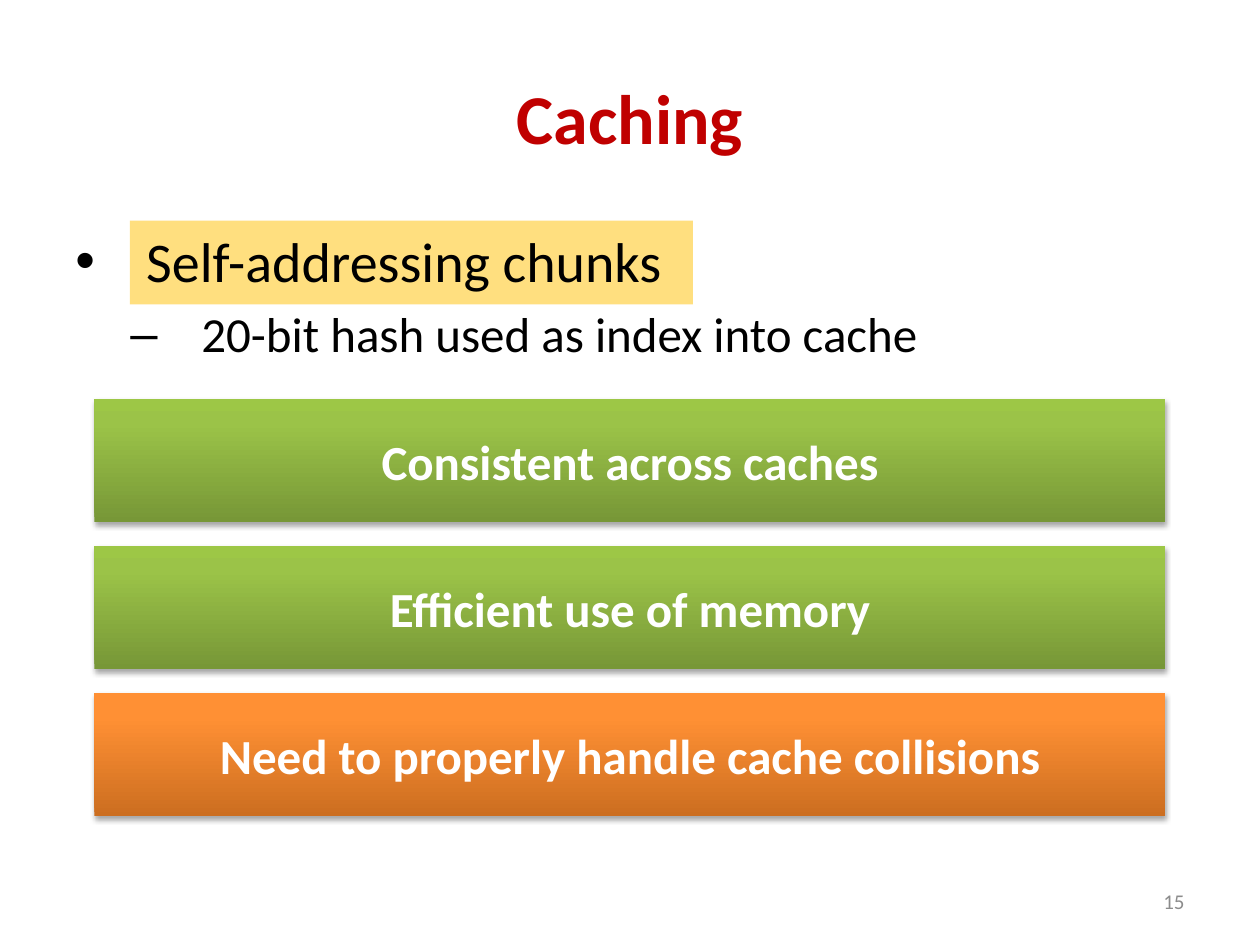
from dataclasses import dataclass

from lxml import etree
from pptx import Presentation
from pptx import util as u
from pptx.dml.color import RGBColor
from pptx.enum import shapes, text
from pptx.oxml import ns


@dataclass(frozen=True)
class Theme:
    font: str = "Calibri"
    bullet_font: str = "Arial"
    title_size: int = 40
    body_size: int = 32
    detail_size: int = 28
    number_size: int = 12
    title: str = "C00000"
    body: str = "000000"
    number: str = "8C8C8C"
    on_band: str = "FFFFFF"
    highlight: str = "FFC000"
    green: tuple = ((0, "779737"), (80, "9BC348"), (100, "9DC746"))
    orange: tuple = ((0, "CC6E20"), (80, "FF9034"), (100, "FF9136"))


def add_xml(parent, tag, **attributes):
    return etree.SubElement(parent, ns.qn(tag), attributes)


class SlideBuilder:
    def __init__(self, slide, theme):
        self.slide = slide
        self.theme = theme

    def add_run(self, paragraph, words, size, color, bold=False):
        run = paragraph.add_run()
        run.text = words
        run.font.name = self.theme.font
        run.font.size = u.Pt(size)
        run.font.bold = bold
        run.font.color.rgb = RGBColor.from_string(color)

    def add_title(self, words, left, top, width, height):
        title = self.slide.shapes.title
        title.left, title.top = u.Pt(left), u.Pt(top)
        title.width, title.height = u.Pt(width), u.Pt(height)
        title.text_frame.vertical_anchor = text.MSO_ANCHOR.MIDDLE
        paragraph = title.text_frame.paragraphs[0]
        paragraph.alignment = text.PP_ALIGN.CENTER
        self.add_run(paragraph, words, self.theme.title_size, self.theme.title, True)

    def add_rectangle(self, left, top, width, height):
        shape = self.slide.shapes.add_shape(
            shapes.MSO_SHAPE.RECTANGLE, u.Pt(left), u.Pt(top), u.Pt(width), u.Pt(height))
        shape.line.fill.background()
        shape.shadow.inherit = False
        return shape

    def add_highlight(self, left, top, width, height):
        shape = self.add_rectangle(left, top, width, height)
        shape.fill.solid()
        shape.fill.fore_color.rgb = RGBColor.from_string(self.theme.highlight)
        color = shape.fill._xPr.find(".//" + ns.qn("a:srgbClr"))
        add_xml(color, "a:alpha", val="50000")

    def add_text_box(self, left, top, width, height):
        box = self.slide.shapes.add_textbox(
            u.Pt(left), u.Pt(top), u.Pt(width), u.Pt(height))
        box.text_frame.word_wrap = True
        return box.text_frame

    def add_bullets(self, items, left, top, width, height, hanging=40.5):
        """Each item is (level, marker, words, size, indent, space before)."""
        frame = self.add_text_box(left, top, width, height)
        for index, (level, marker, words, size, indent, space) in enumerate(items):
            paragraph = frame.add_paragraph() if index else frame.paragraphs[0]
            paragraph.level = level
            paragraph.space_before = u.Pt(space)
            properties = paragraph._p.get_or_add_pPr()
            properties.set("marL", str(u.Pt(indent)))
            properties.set("indent", str(-u.Pt(hanging)))
            add_xml(properties, "a:buFont", typeface=self.theme.bullet_font)
            add_xml(properties, "a:buChar", char=marker)
            self.add_run(paragraph, words, size, self.theme.body)

    def add_band(self, words, stops, left, top, width, height, inset=18):
        """A gradient bar with a soft shadow, its first stop at the bottom."""
        shape = self.add_rectangle(left, top, width, height)
        shape.fill.background()
        properties = shape.fill._xPr
        gradient = etree.Element(ns.qn("a:gradFill"), rotWithShape="1")
        stop_list = add_xml(gradient, "a:gsLst")
        for position, color in stops:
            stop = add_xml(stop_list, "a:gs", pos=str(position * 1000))
            add_xml(stop, "a:srgbClr", val=color)
        add_xml(gradient, "a:lin", ang="16200000", scaled="0")
        properties.replace(properties.find(ns.qn("a:noFill")), gradient)

        shadow = add_xml(
            properties.find(ns.qn("a:effectLst")), "a:outerShdw",
            blurRad=str(u.Pt(3.1)), dist=str(u.Pt(1.8)), dir="5400000", rotWithShape="0")
        shadow_color = add_xml(shadow, "a:srgbClr", val="000000")
        add_xml(shadow_color, "a:alpha", val="35000")

        frame = shape.text_frame
        frame.margin_left = frame.margin_right = u.Pt(inset)
        frame.margin_top = frame.margin_bottom = u.Pt(inset)
        frame.word_wrap = True
        frame.auto_size = text.MSO_AUTO_SIZE.SHAPE_TO_FIT_TEXT
        frame.vertical_anchor = text.MSO_ANCHOR.MIDDLE
        paragraph = frame.paragraphs[0]
        paragraph.alignment = text.PP_ALIGN.CENTER
        self.add_run(paragraph, words, self.theme.detail_size, self.theme.on_band, True)

    def add_slide_number(self, number, left, top, width, height):
        frame = self.add_text_box(left, top, width, height)
        frame.vertical_anchor = text.MSO_ANCHOR.MIDDLE
        paragraph = frame.paragraphs[0]
        paragraph.alignment = text.PP_ALIGN.RIGHT
        self.add_run(paragraph, number, self.theme.number_size, self.theme.number)


def main():
    presentation = Presentation()
    presentation.slide_width, presentation.slide_height = u.Pt(720), u.Pt(540)
    slide = presentation.slides.add_slide(presentation.slide_layouts[5])
    theme = Theme()
    builder = SlideBuilder(slide, theme)

    builder.add_title("Caching", 36, 21.6, 648, 90)
    builder.add_highlight(74.2, 126, 321.8, 48)
    builder.add_bullets([
        (0, "•", "Self-addressing chunks", theme.body_size, 40.5, 16),
        (1, "–", "20-bit hash used as index into cache", theme.detail_size, 72, 5.6),
    ], 36, 126, 648, 356.4)
    builder.add_slide_number("15", 516, 500.5, 168, 28.75)

    bands = [
        ("Consistent across caches", theme.green),
        ("Efficient use of memory", theme.green),
        ("Need to properly handle cache collisions", theme.orange),
    ]
    for row, (words, stops) in enumerate(bands):
        builder.add_band(words, stops, 54, 228 + 84 * row, 612, 70.2)

    presentation.save("out.pptx")


if __name__ == "__main__":
    main()
